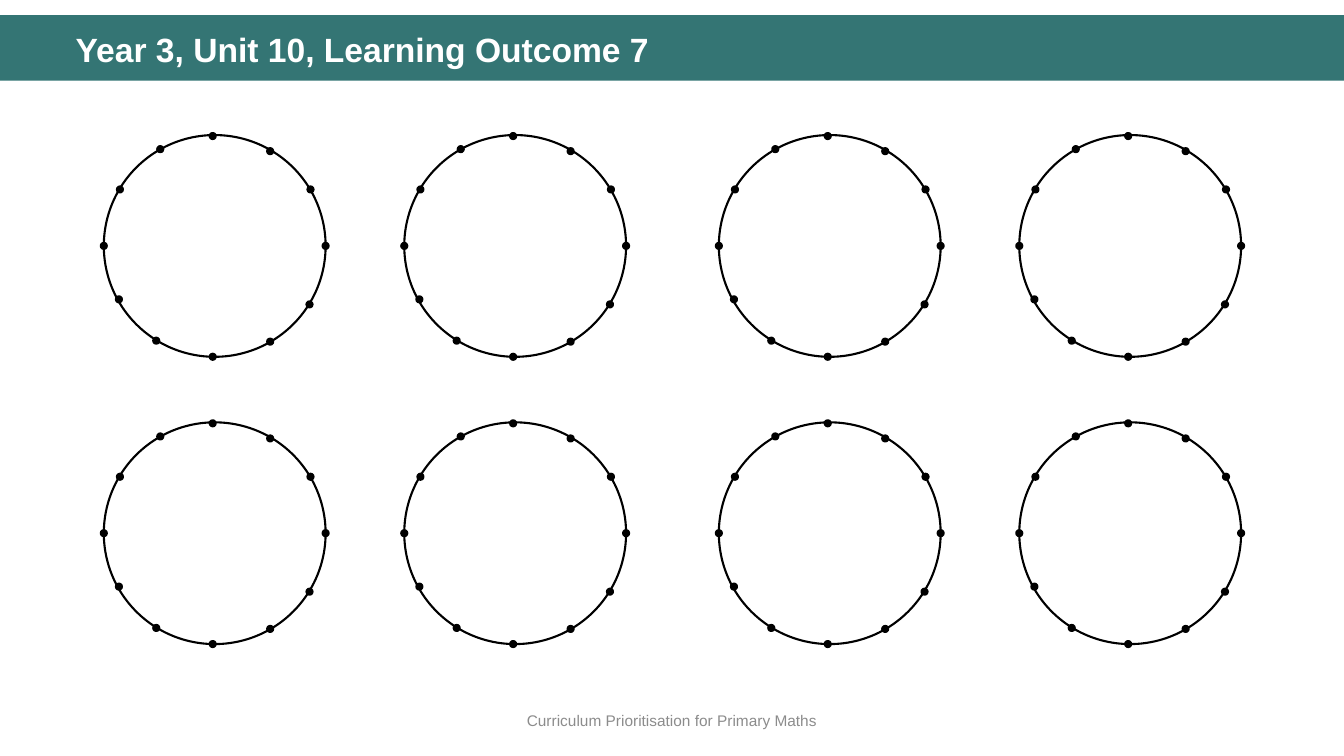
from dataclasses import dataclass
from itertools import product

from pptx import Presentation
from pptx.dml.color import RGBColor
from pptx.enum.shapes import MSO_SHAPE
from pptx.enum.text import MSO_ANCHOR, MSO_AUTO_SIZE, PP_ALIGN
from pptx.util import Inches, Pt


@dataclass(frozen=True)
class Theme:
    font: str = "Arial"
    band: RGBColor = RGBColor(0x34, 0x75, 0x74)
    heading: RGBColor = RGBColor(0xFF, 0xFF, 0xFF)
    footer: RGBColor = RGBColor(0x8C, 0x8C, 0x8C)
    ink: RGBColor = RGBColor(0, 0, 0)
    heading_size: Pt = Pt(24)
    footer_size: Pt = Pt(11)
    outline: Pt = Pt(1.5)


THEME = Theme()
SLIDE_WIDTH, SLIDE_HEIGHT = 13.33, 7.5
CIRCLE_SIZE = 2.2
DOT_SIZE = 0.06
DOT_CENTRES = [
    (1.08, 0.01), (1.65, 0.16), (2.05, 0.54), (2.2, 1.1),
    (2.04, 1.68), (1.65, 2.05), (1.08, 2.2), (0.52, 2.04),
    (0.15, 1.63), (0, 1.1), (0.16, 0.54), (0.56, 0.14),
]
PAIR_LEFTS = (1.03, 7.13)
PAIR_STEP = 2.98
ROW_STEP = 2.85


def write(frame, text, size, color, bold=False):
    frame.text = text
    frame.word_wrap = True
    frame.auto_size = MSO_AUTO_SIZE.NONE
    paragraph = frame.paragraphs[0]
    font = paragraph.runs[0].font
    font.name, font.size, font.bold = THEME.font, size, bold
    font.color.rgb = color
    return paragraph


def add_header(slide, left, top, width, height):
    band = slide.shapes.add_shape(
        MSO_SHAPE.RECTANGLE, Inches(left), Inches(top), Inches(width), Inches(height))
    band.shadow.inherit = False
    band.fill.solid()
    band.fill.fore_color.rgb = THEME.band
    band.line.fill.background()

    heading = slide.shapes.title
    heading.left, heading.top = Inches(left + 0.65), Inches(top + 0.12)
    heading.width, heading.height = Inches(width - 1.15), Inches(0.47)
    heading.element.addprevious(band.element)
    paragraph = write(heading.text_frame, "Year 3, Unit 10, Learning Outcome 7",
                      THEME.heading_size, THEME.heading, bold=True)
    paragraph.alignment = PP_ALIGN.LEFT
    paragraph.line_spacing = 0.9
    heading.text_frame.vertical_anchor = MSO_ANCHOR.BOTTOM


def add_footer(slide, left, top, width, height):
    footer = slide.shapes.add_textbox(
        Inches(left), Inches(top), Inches(width), Inches(height))
    paragraph = write(footer.text_frame, "Curriculum Prioritisation for Primary Maths",
                      THEME.footer_size, THEME.footer)
    paragraph.alignment = PP_ALIGN.CENTER
    footer.text_frame.vertical_anchor = MSO_ANCHOR.MIDDLE


def add_ellipse(group, left, top, size, filled):
    ellipse = group.shapes.add_shape(
        MSO_SHAPE.OVAL, Inches(left), Inches(top), Inches(size), Inches(size))
    ellipse.shadow.inherit = False
    if filled:
        ellipse.fill.solid()
        ellipse.fill.fore_color.rgb = THEME.ink
    else:
        ellipse.fill.background()
    ellipse.line.color.rgb = THEME.ink
    ellipse.line.width = THEME.outline


def add_dotted_circle(slide, left, top, size):
    group = slide.shapes.add_group_shape()
    add_ellipse(group, left, top, size, filled=False)
    scale = size / CIRCLE_SIZE
    for x, y in DOT_CENTRES:
        add_ellipse(group, left + x * scale - DOT_SIZE / 2,
                    top + y * scale - DOT_SIZE / 2, DOT_SIZE, filled=True)


def add_circle_grid(slide, top):
    for pair_left, column, row in product(PAIR_LEFTS, range(2), range(2)):
        add_dotted_circle(slide, pair_left + column * PAIR_STEP,
                          top + row * ROW_STEP, CIRCLE_SIZE)


def main():
    presentation = Presentation()
    presentation.slide_width = Inches(SLIDE_WIDTH)
    presentation.slide_height = Inches(SLIDE_HEIGHT)
    slide = presentation.slides.add_slide(presentation.slide_layouts[5])
    add_header(slide, 0, 0.15, SLIDE_WIDTH, 0.65)
    add_footer(slide, 0, 6.95, SLIDE_WIDTH, 0.4)
    add_circle_grid(slide, 1.34)
    presentation.save("out.pptx")


if __name__ == "__main__":
    main()
